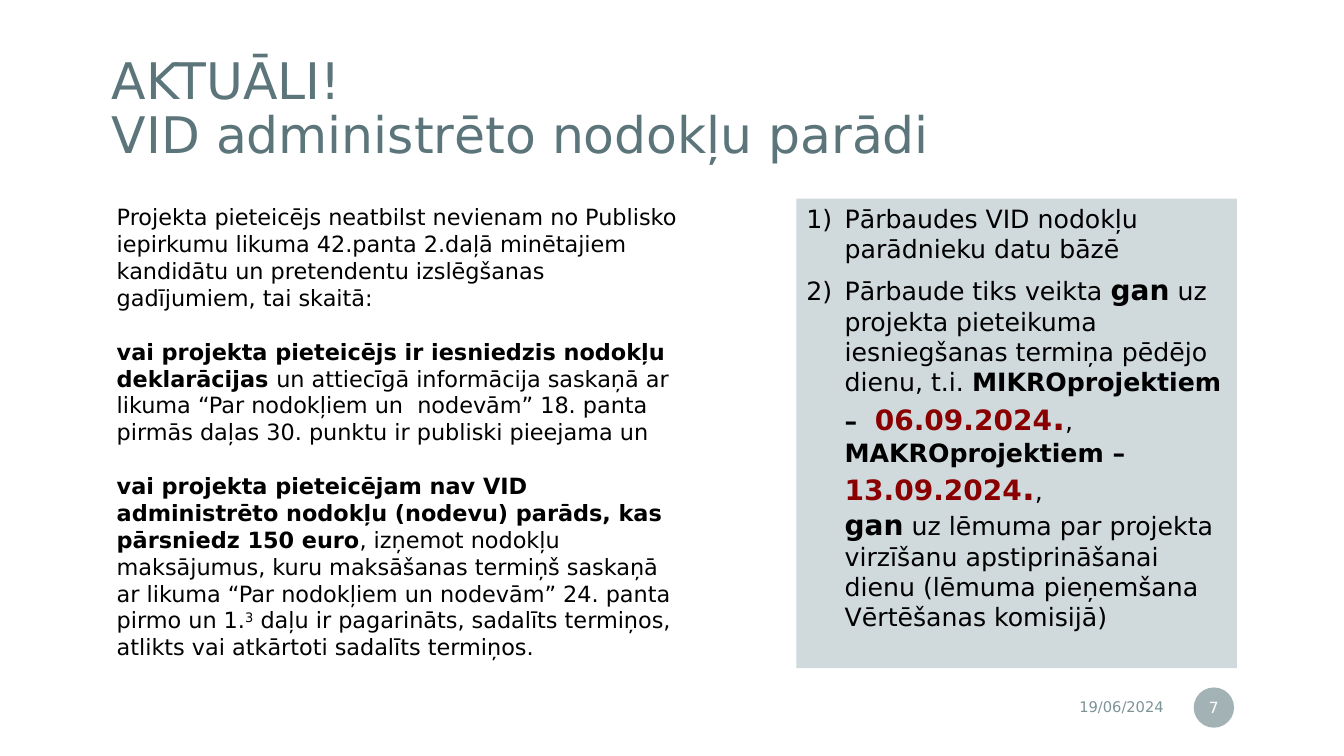
from dataclasses import dataclass

from lxml.etree import SubElement
from pptx import Presentation
from pptx.dml.color import RGBColor
from pptx.enum.shapes import MSO_SHAPE as Shape
from pptx.enum.text import MSO_ANCHOR as Anchor, PP_ALIGN as Align
from pptx.oxml.ns import qn
from pptx.util import Inches, Pt


@dataclass(frozen=True)
class Theme:
    font: str = "DejaVu Sans"
    heading: str = "5B757A"
    muted: str = "7C9396"
    panel: str = "D0D9DC"
    ink: str = "000000"
    alert: str = "8A0000"
    white: str = "FFFFFF"
    title_size: float = 36
    body_size: float = 16
    list_size: float = 18
    strong_size: float = 20
    dot_size: float = 24
    date_size: float = 10.5
    number_size: float = 11


THEME = Theme()


def write(paragraph, text, size, color=THEME.ink, bold=False, superscript=False):
    """Add formatted text; a newline becomes a line break."""
    for index, line in enumerate(text.split("\n")):
        if index:
            paragraph.add_line_break()
        if not line:
            continue
        run = paragraph.add_run()
        run.text = line
        run.font.name = THEME.font
        run.font.size = Pt(size)
        run.font.bold = bold
        run.font.color.rgb = RGBColor.from_string(color)
        if superscript:
            run.font._element.set("baseline", "30000")


class SlideBuilder:
    """Places elements by percentages of the slide's width and height."""

    def __init__(self, presentation, theme):
        self.theme = theme
        self.width = presentation.slide_width
        self.height = presentation.slide_height
        self.slide = presentation.slides.add_slide(presentation.slide_layouts[6])

    def area(self, left, top, width, height):
        return (int(left * self.width / 100), int(top * self.height / 100),
                int(width * self.width / 100), int(height * self.height / 100))

    def frame(self, shape, anchor=Anchor.TOP, side=0.1, edge=0.05):
        frame = shape.text_frame
        frame.word_wrap = True
        frame.vertical_anchor = anchor
        frame.margin_left = frame.margin_right = Inches(side)
        frame.margin_top = frame.margin_bottom = Inches(edge)
        return frame

    def text_box(self, *area, **layout):
        return self.frame(self.slide.shapes.add_textbox(*self.area(*area)), **layout)

    def filled(self, kind, color, *area, opacity=100, **layout):
        shape = self.slide.shapes.add_shape(kind, *self.area(*area))
        shape.shadow.inherit = False
        shape.fill.solid()
        shape.fill.fore_color.rgb = RGBColor.from_string(color)
        shape.line.fill.background()
        if opacity < 100:
            tint = shape._element.spPr.find(qn("a:solidFill"))[0]
            SubElement(tint, qn("a:alpha")).set("val", str(opacity * 1000))
        return self.frame(shape, **layout)

    def paragraphs(self, frame, contents, size, gap=0, numbered=False):
        """Each paragraph is a list of (text, format) pairs."""
        for index, runs in enumerate(contents):
            paragraph = frame.add_paragraph() if index else frame.paragraphs[0]
            paragraph.alignment = Align.LEFT
            if index:
                paragraph.space_before = Pt(gap)
            if numbered:
                properties = paragraph._p.get_or_add_pPr()
                properties.set("marL", str(Inches(0.38)))
                properties.set("indent", str(Inches(-0.38)))
                SubElement(properties, qn("a:buFont")).set("typeface", self.theme.font)
                SubElement(properties, qn("a:buAutoNum")).set("type", "arabicParenR")
            for text, style in runs:
                write(paragraph, text, **{"size": size, **style})


def main():
    presentation = Presentation()
    presentation.slide_width = Inches(13.33)
    presentation.slide_height = Inches(7.5)
    builder = SlideBuilder(presentation, THEME)

    # Title
    title = builder.text_box(6.83, 6.4, 82.07, 16.4, anchor=Anchor.MIDDLE,
                             side=0.2, edge=0.2).paragraphs[0]
    title.line_spacing = 0.9
    write(title, "AKTUĀLI! \nVID administrēto nodokļu parādi",
          size=THEME.title_size, color=THEME.heading)

    # Date and slide number
    date = builder.text_box(64.74, 91.2, 22.58, 4.67, anchor=Anchor.MIDDLE).paragraphs[0]
    date.alignment = Align.RIGHT
    write(date, "19/06/2024", size=THEME.date_size, color=THEME.muted)

    number = builder.filled(Shape.OVAL, THEME.muted, 88.82, 90.93, 3, 5.33, opacity=70,
                            anchor=Anchor.MIDDLE, side=0.02).paragraphs[0]
    number.alignment = Align.CENTER
    write(number, "7", size=THEME.number_size, color=THEME.white)

    # Conditions for the applicant
    plain, bold = {}, {"bold": True}
    conditions = [
        [("Projekta pieteicējs neatbilst nevienam no Publisko iepirkumu likuma 42.panta "
          "2.daļā minētajiem kandidātu un pretendentu izslēgšanas gadījumiem, tai skaitā:",
          plain)],
        [("vai projekta pieteicējs ir iesniedzis nodokļu deklarācijas ", bold),
         ("un attiecīgā informācija saskaņā ar likuma “Par nodokļiem un  nodevām” "
          "18. panta pirmās daļas 30. punktu ir publiski pieejama un", plain)],
        [("vai projekta pieteicējam nav VID administrēto nodokļu (nodevu) parāds, "
          "kas pārsniedz 150 euro", bold),
         (", izņemot nodokļu maksājumus, kuru maksāšanas termiņš saskaņā ar likuma "
          "“Par nodokļiem un nodevām” 24. panta pirmo un 1.", plain),
         ("3", {"superscript": True}),
         (" daļu ir pagarināts, sadalīts termiņos, atlikts vai atkārtoti sadalīts "
          "termiņos.", plain)],
    ]
    builder.paragraphs(builder.text_box(7.95, 26.27, 43.21, 62.4), conditions,
                       size=THEME.body_size, gap=19.2)

    # Panel with the checks
    strong = {"bold": True, "size": THEME.strong_size}
    deadline = {**strong, "color": THEME.alert}
    dot = {**deadline, "size": THEME.dot_size}
    checks = [
        [("Pārbaudes VID nodokļu parādnieku datu bāzē", plain)],
        [("Pārbaude tiks veikta ", plain), ("gan", strong),
         (" uz projekta pieteikuma iesniegšanas termiņa pēdējo dienu, t.i. ", plain),
         ("MIKROprojektiem –  ", bold), ("06.09.2024", deadline), (".", dot),
         (", ", plain),
         ("MAKROprojektiem –  ", bold), ("13.09.2024", deadline), (".", dot),
         (",\n", plain), ("gan", strong),
         (" uz lēmuma par projekta virzīšanu apstiprināšanai dienu "
          "(lēmuma pieņemšana Vērtēšanas komisijā)", plain)],
    ]
    panel = builder.filled(Shape.RECTANGLE, THEME.panel, 59.26, 26.27, 32.78, 62.13)
    builder.paragraphs(panel, checks, size=THEME.list_size, gap=6, numbered=True)

    presentation.save("out.pptx")


if __name__ == "__main__":
    main()
